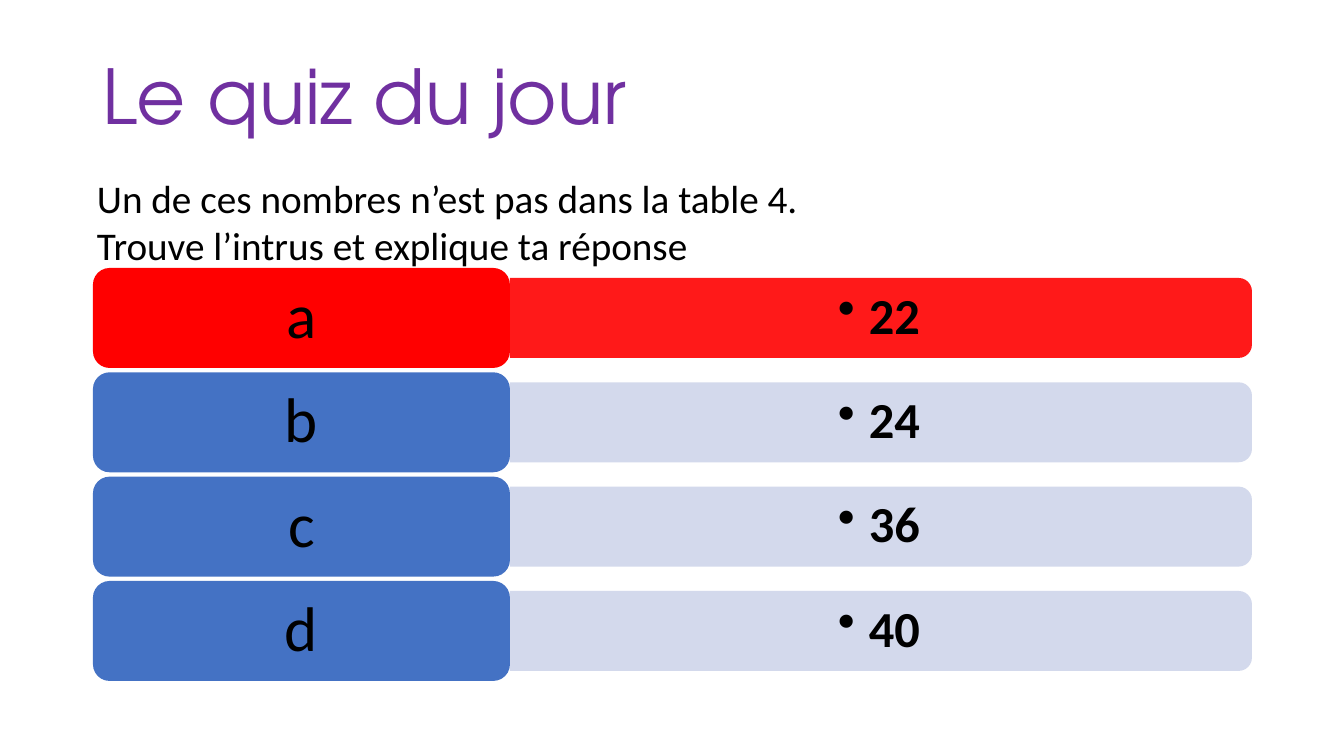
"""Build the quiz slide about the odd number out in the table of 4."""
from lxml import etree
from pptx import Presentation
from pptx.dml.color import RGBColor
from pptx.enum.shapes import MSO_SHAPE
from pptx.enum.text import MSO_ANCHOR, PP_ALIGN
from pptx.oxml.ns import qn
from pptx.util import Pt

TITLE = "Le quiz du jour"
QUESTION = [
    "Un de ces nombres n’est pas dans la table 4.",
    "Trouve l’intrus et explique ta réponse",
]
ANSWERS = [
    ("a", "22", "red", "red"),
    ("b", "24", "blue", "pale"),
    ("c", "36", "blue", "pale"),
    ("d", "40", "blue", "pale"),
]
COLORS = {
    "purple": "7030A0",
    "red": "FF0000",
    "blue": "4472C4",
    "pale": "CFD5EA",
    "black": "000000",
}
TITLE_FONT, BODY_FONT = "TeX Gyre Adventor", "Calibri"

ROUND_RECT = MSO_SHAPE.ROUNDED_RECTANGLE
ROUND_TOP = MSO_SHAPE.ROUND_2_SAME_RECTANGLE
MIDDLE, CENTER = MSO_ANCHOR.MIDDLE, PP_ALIGN.CENTER

SLIDE_W, SLIDE_H = 1344, 756
GRID_TOP, GRID_BOTTOM = 268, 681
LABEL_X, LABEL_W, LABEL_H = 93, 417, 100
BAR_X, BAR_W, BAR_H = 510, 742, 80
PITCH = (GRID_BOTTOM - GRID_TOP - LABEL_H) / (len(ANSWERS) - 1)
BULLET_INDENT = 31


def px(length):
    return round(length * 914400 / 100.8)


def place(*lengths):
    return [px(length) for length in lengths]


def style(paragraph, size, color="black", name=BODY_FONT, bold=False):
    paragraph.font.size = Pt(size)
    paragraph.font.name = name
    paragraph.font.bold = bold
    paragraph.font.color.rgb = RGBColor.from_string(COLORS[color])


def write_centered(shape, text, size, inset, bold=False):
    frame = shape.text_frame
    frame.word_wrap = True
    frame.vertical_anchor = MIDDLE
    frame.margin_left = frame.margin_right = px(inset)
    frame.margin_top = frame.margin_bottom = px(inset / 2)
    paragraph = frame.paragraphs[0]
    paragraph.text = text
    paragraph.alignment = CENTER
    paragraph.line_spacing = 0.9
    style(paragraph, size, bold=bold)
    return paragraph


def add_block(page, kind, box, color):
    shape = page.shapes.add_shape(kind, *place(*box))
    shape.shadow.inherit = False
    shape.fill.solid()
    shape.fill.fore_color.rgb = RGBColor.from_string(COLORS[color])
    shape.line.fill.background()
    return shape


def add_bar(page, center_y, color):
    center_x = BAR_X + BAR_W / 2
    box = (center_x - BAR_H / 2, center_y - BAR_W / 2, BAR_H, BAR_W)
    bar = add_block(page, ROUND_TOP, box, color)
    bar.rotation = 90
    tint = next(bar.element.spPr.iter(qn("a:srgbClr")))
    etree.SubElement(tint, qn("a:alpha"), val="90000")


def add_number(page, center_y, number):
    box = page.shapes.add_textbox(*place(BAR_X, center_y - 36, BAR_W - 4, 72))
    paragraph = write_centered(box, number, 36, 15, bold=True)
    properties = paragraph.font._element.getparent()
    properties.set("marL", str(px(BULLET_INDENT)))
    properties.set("indent", str(-px(BULLET_INDENT)))
    bullet = etree.Element(qn("a:buChar"), char="•")
    properties.find(qn("a:defRPr")).addprevious(bullet)


def add_answer(page, row, letter, number, label_color, bar_color):
    top = GRID_TOP + row * PITCH
    center_y = top + LABEL_H / 2
    add_bar(page, center_y, bar_color)
    add_number(page, center_y, number)
    label = add_block(page, ROUND_RECT, (LABEL_X, top, LABEL_W, LABEL_H), label_color)
    write_centered(label, letter, 45, 19)


def add_title(page):
    title = page.shapes.title
    title.left, title.top, title.width, title.height = place(92, 27, 1159, 146)
    title.text_frame.text = TITLE
    title.text_frame.vertical_anchor = MIDDLE
    paragraph = title.text_frame.paragraphs[0]
    paragraph.alignment = PP_ALIGN.LEFT
    paragraph.line_spacing = 0.9
    style(paragraph, 54, "purple", TITLE_FONT)


def add_question(page):
    box = page.shapes.add_textbox(*place(87, 169, 730, 152))
    box.text_frame.word_wrap = False
    box.text_frame.text = "\n".join(QUESTION)
    for paragraph in box.text_frame.paragraphs:
        style(paragraph, 28)


def main():
    deck = Presentation()
    deck.slide_width, deck.slide_height = place(SLIDE_W, SLIDE_H)
    page = deck.slides.add_slide(deck.slide_layouts[5])
    add_title(page)
    for row, answer in enumerate(ANSWERS):
        add_answer(page, row, *answer)
    add_question(page)
    deck.save("out.pptx")


if __name__ == "__main__":
    main()
